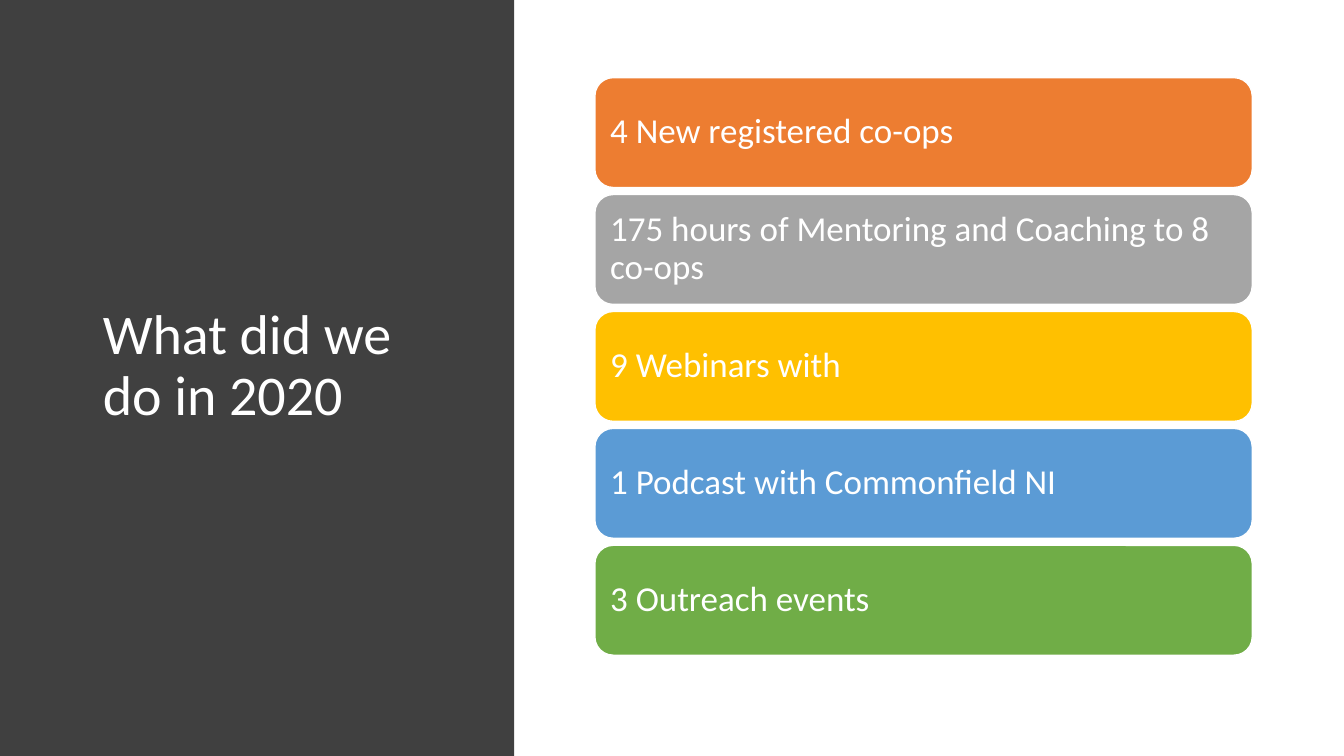
from dataclasses import dataclass

from pptx import Presentation
from pptx.dml.color import RGBColor
from pptx.enum.shapes import MSO_SHAPE
from pptx.enum.text import MSO_ANCHOR, MSO_AUTO_SIZE, PP_ALIGN
from pptx.util import Inches, Pt


@dataclass(frozen=True)
class Theme:
    font: str = "Calibri"
    title_size: int = 40
    card_size: int = 25
    line_spacing: float = 0.9
    light: str = "FFFFFF"
    panel: str = "404040"
    cards: tuple = ("ED7D31", "A5A5A5", "FFC000", "5B9BD5", "70AD47")


class SlideBuilder:
    def __init__(self, slide, theme):
        self.slide = slide
        self.theme = theme

    def set_label(self, shape, text, size, inset):
        """Put left-aligned, vertically centred light text in a shape."""
        frame = shape.text_frame
        frame.text = text
        frame.word_wrap = True
        frame.auto_size = MSO_AUTO_SIZE.NONE
        frame.vertical_anchor = MSO_ANCHOR.MIDDLE
        frame.margin_left = frame.margin_right = Inches(0.1)
        frame.margin_top = frame.margin_bottom = Inches(inset)
        paragraph = frame.paragraphs[0]
        paragraph.alignment = PP_ALIGN.LEFT
        paragraph.line_spacing = self.theme.line_spacing
        for run in paragraph.runs:
            run.font.name = self.theme.font
            run.font.size = Pt(size)
            run.font.color.rgb = RGBColor.from_string(self.theme.light)

    def block(self, preset, left, top, width, height, color):
        shape = self.slide.shapes.add_shape(
            preset, Inches(left), Inches(top), Inches(width), Inches(height))
        shape.shadow.inherit = False
        shape.fill.solid()
        shape.fill.fore_color.rgb = RGBColor.from_string(color)
        shape.line.fill.background()
        return shape

    def side_panel(self, width, height):
        return self.block(MSO_SHAPE.RECTANGLE, 0, 0, width, height, self.theme.panel)

    def title(self, text, left, top, width, height):
        """Fill the title placeholder and bring it in front of the panel."""
        title = self.slide.shapes.title
        title.left, title.top = Inches(left), Inches(top)
        title.width, title.height = Inches(width), Inches(height)
        self.set_label(title, text, self.theme.title_size, 0.05)
        title.element.getparent().append(title.element)

    def card(self, text, left, top, width, height, color):
        card = self.block(
            MSO_SHAPE.ROUNDED_RECTANGLE, left, top, width, height, color)
        card.line.color.rgb = RGBColor.from_string(self.theme.light)
        card.line.width = Pt(1)
        self.set_label(card, text, self.theme.card_size, 0.1)

    def card_stack(self, texts, left, top, width, height, gap):
        for row, (text, color) in enumerate(zip(texts, self.theme.cards)):
            self.card(text, left, top + row * (height + gap), width, height, color)


def main():
    presentation = Presentation()
    presentation.slide_width = Inches(13.33)
    presentation.slide_height = Inches(7.5)
    title_only = presentation.slide_layouts[5]
    builder = SlideBuilder(presentation.slides.add_slide(title_only), Theme())

    builder.side_panel(5.1, 7.5)
    builder.title("What did we do in 2020", 0.92, 0.68, 3.67, 5.92)
    achievements = (
        "4 New registered co-ops",
        "175 hours of Mentoring and Coaching to 8 co-ops",
        "9 Webinars with",
        "1 Podcast with Commonfield NI",
        "3 Outreach events",
    )
    builder.card_stack(achievements, 5.9, 0.77, 6.52, 1.09, 0.07)

    presentation.save("out.pptx")


if __name__ == "__main__":
    main()
